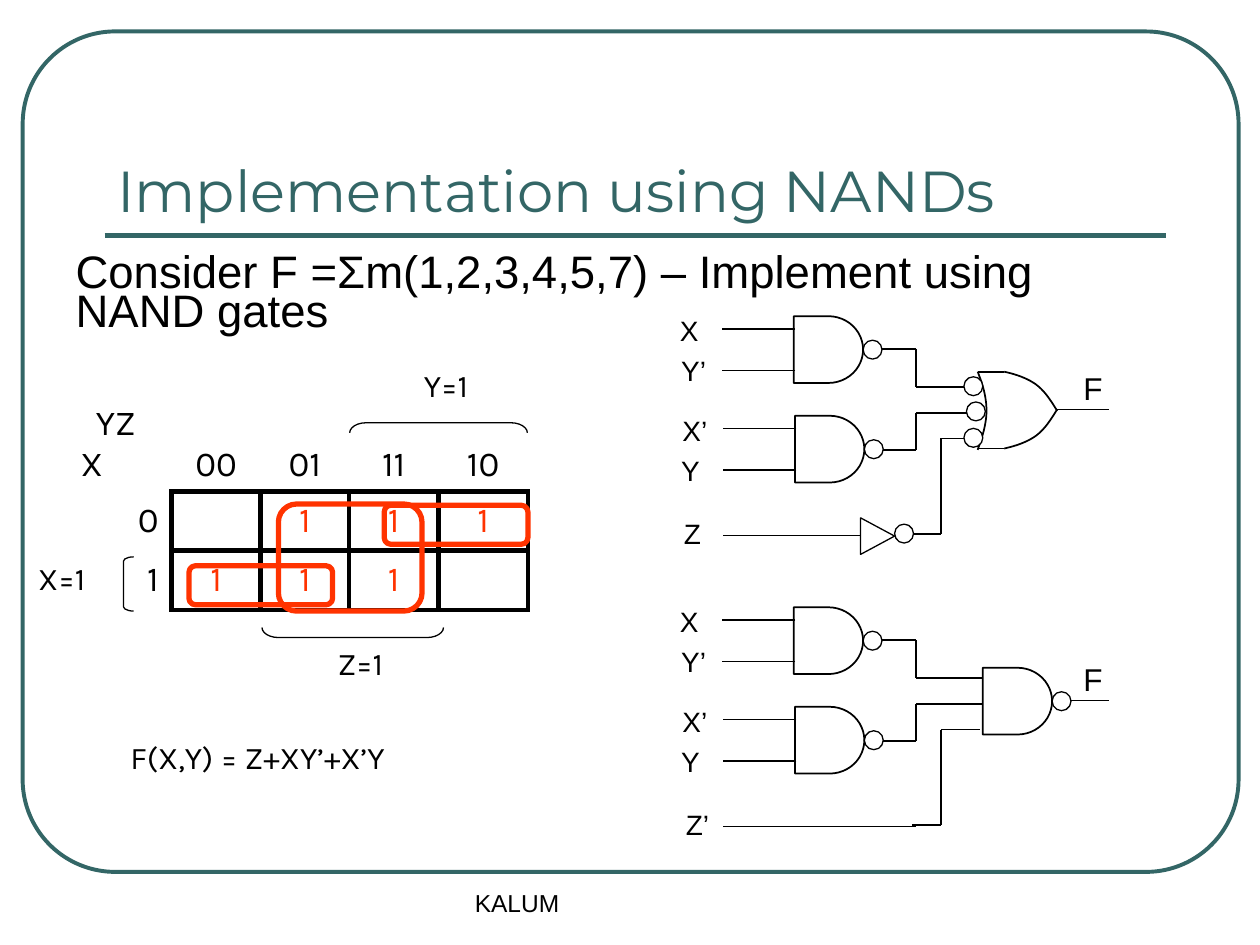
from itertools import pairwise

from lxml.etree import SubElement
from pptx import Presentation
from pptx.dml.color import RGBColor
from pptx.enum.shapes import MSO_CONNECTOR, MSO_SHAPE
from pptx.enum.text import MSO_ANCHOR, PP_ALIGN
from pptx.oxml.ns import qn
from pptx.util import Pt

PX = 9144  # 100 px to the inch
TEAL, BLACK, RED, WHITE = "336666", "000000", "FF3300", "FFFFFF"
CIRCUIT_PITCH = 231
NO_STYLE = "{2D5ABB26-0587-4C30-8999-92F81FD0307C}"


def px(*lengths):
    return [round(length * PX) for length in lengths]


def rgb(value):
    return RGBColor.from_string(value)


def write(frame, text, size=18, font="Karla", color=BLACK,
          align=PP_ALIGN.CENTER, anchor=MSO_ANCHOR.TOP, wrap=True):
    """Fill a text frame with one formatted paragraph and return it."""
    frame.word_wrap = wrap
    frame.vertical_anchor = anchor
    paragraph = frame.paragraphs[0]
    paragraph.text = text
    paragraph.alignment = align
    for run in paragraph.runs:
        run.font.size = Pt(size)
        run.font.name = font
        run.font.color.rgb = rgb(color)
    return paragraph


def label(slide, text, left, top, width, height=37, wrap=False, **text_format):
    box = slide.shapes.add_textbox(*px(left, top, width, height))
    write(box.text_frame, text, wrap=wrap, **text_format)


def signal(slide, text, left, top, width):
    label(slide, text, left, top, width, font="Arial", size=16)


def outline(shape, color=BLACK, weight=1, fill=None):
    shape.shadow.inherit = False
    if fill:
        shape.fill.solid()
        shape.fill.fore_color.rgb = rgb(fill)
    else:
        shape.fill.background()
    shape.line.color.rgb = rgb(color)
    shape.line.width = Pt(weight)


def figure(slide, kind, left, top, width, height, adjust=None, turn=0, **look):
    shape = slide.shapes.add_shape(kind, *px(left, top, width, height))
    if adjust is not None:
        shape.adjustments[0] = adjust
    shape.rotation = turn
    outline(shape, **look)


def wire(slide, *points, color=BLACK, weight=1):
    """Join the points with straight connectors."""
    for start, end in pairwise(points):
        segment = slide.shapes.add_connector(
            MSO_CONNECTOR.STRAIGHT, *px(*start, *end))
        segment.line.color.rgb = rgb(color)
        segment.line.width = Pt(weight)
        SubElement(segment._element.spPr, qn("a:effectLst"))


def curve(slide, points, steps=10):
    """Draw chained cubic Bezier curves as one open line."""
    track = [points[0]]
    for first in range(0, len(points) - 1, 3):
        a, b, c, d = points[first:first + 4]
        for step in range(1, steps + 1):
            t = step / steps
            u = 1 - t
            track.append([u**3 * a[i] + 3 * u * u * t * b[i]
                          + 3 * u * t * t * c[i] + t**3 * d[i] for i in (0, 1)])
    track = [px(*point) for point in track]
    builder = slide.shapes.build_freeform(*track[0])
    builder.add_line_segments(track[1:], close=False)
    outline(builder.convert_to_shape())


def bubble(slide, left, top):
    figure(slide, MSO_SHAPE.OVAL, left, top, 15, 15, weight=0.75, fill=WHITE)


def nand(slide, left, top):
    figure(slide, MSO_SHAPE.FLOWCHART_DELAY, left, top, 55, 53)
    bubble(slide, left + 55, top + 19)


def product_terms(slide, drop):
    """Draw the two input NANDs and their wires to the output gate."""
    for left, top, names, out, target in (
            (630, 251, ("X", "Y’"), 277, 307), (631, 330, ("X’", "Y"), 357, 328)):
        wire(slide, *((x, y + drop) for x, y in (
            (687, out), (727, out), (727, target), (780, target))))
        for row, name in enumerate(names):
            y = top + drop + 33 * row
            wire(slide, (left + 1, y + 10), (left - 57, y + 10))
            signal(slide, name, left - 101, top + drop - 7 + 32 * row,
                   29 + 7 * len(name))
        nand(slide, left, top + drop)
    wire(slide, *((x, y + drop) for x, y in (
        (724, 424), (747, 424), (747, 348), (778, 348))))


def output(slide, drop):
    label(slide, "F", 850, 288 + drop, 34, 40, font="Arial")
    wire(slide, (839, 325 + drop), (880, 325 + drop))


def nand_or_circuit(slide):
    product_terms(slide, 0)
    output(slide, 0)
    curve(slide, [(776, 295), (780, 305), (783, 315), (783, 326),
                  (783, 336), (780, 346), (776, 357)])
    nose = [(797, 295), (806, 297), (815, 300), (822, 305),
            (829, 310), (834, 318), (839, 326)]
    for edge in (nose, [(x, 651 - y) for x, y in nose]):
        wire(slide, (776, edge[0][1]), edge[0])
        curve(slide, edge)
    for left, top in ((765, 299), (767, 319), (765, 340), (710, 416)):
        bubble(slide, left, top)
    figure(slide, MSO_SHAPE.ISOSCELES_TRIANGLE, 682, 412, 29, 27,
           turn=90, weight=0.75)
    wire(slide, (683, 425), (574, 425), weight=0.75)
    signal(slide, "Z", 533, 405, 33)


def all_nand_circuit(slide):
    product_terms(slide, CIRCUIT_PITCH)
    output(slide, CIRCUIT_PITCH)
    wire(slide, (727, 656), (574, 656), weight=0.75)
    signal(slide, "Z’", 533, 636, 41)
    nand(slide, 780, 530)


def border(cell, *sides):
    for side in sides:
        line = SubElement(cell._tc.get_or_add_tcPr(), qn(f"a:ln{side}"), w="38100")
        fill = SubElement(line, qn("a:solidFill"))
        SubElement(fill, qn("a:srgbClr"), val=BLACK)


def karnaugh_map(slide):
    rows = (("YZ\vX", "00", "01", "11", "10"),
            ("0", "", "1", "1", "1"),
            ("1", "1", "1", "1", ""))
    frame = slide.shapes.add_table(3, 5, *px(54, 315, 365, 169))
    grid = frame.table
    grid.first_row = grid.horz_banding = False
    grid._tbl.tblPr.find(qn("a:tableStyleId")).text = NO_STYLE
    for column, width in zip(grid.columns, px(82, 71, 70, 71, 71)):
        column.width = width
    for row, height in zip(grid.rows, px(75, 47, 47)):
        row.height = height
    for r, values in enumerate(rows):
        for c, value in enumerate(values):
            cell = grid.cell(r, c)
            if r and c:
                border(cell, "L", "R", "T", "B")
            elif r:
                border(cell, "R")
            elif c:
                border(cell, "B")
            cell.fill.background()
            align = PP_ALIGN.CENTER if c else PP_ALIGN.RIGHT if r else PP_ALIGN.LEFT
            paragraph = write(cell.text_frame, value, size=20, align=align,
                              color=RED if r and c else BLACK)
            cell.vertical_anchor = MSO_ANCHOR.MIDDLE if r else MSO_ANCHOR.BOTTOM
            if not (r or c):
                paragraph._p.get_or_add_pPr().set("indent", str(12 * PX))

    for text, text_place, bracket, adjust, turn in (
            ("Y=1", (313, 286), (344, 269, 8, 141), 1.64, 90),
            ("Z=1", (245, 506), (276, 430, 8, 144), 1.64, 270),
            ("X=1", (8, 439), (98, 442, 8, 43), 0.43, 0)):
        figure(slide, MSO_SHAPE.LEFT_BRACKET, *bracket, adjust=adjust,
               turn=turn, weight=0.75)
        label(slide, text, *text_place, 82, 50)
    for loop in ((221, 400, 114, 85), (305, 401, 114, 31), (150, 449, 114, 31)):
        figure(slide, MSO_SHAPE.ROUNDED_RECTANGLE, *loop, adjust=0.17,
               color=RED, weight=3)
    label(slide, "F(X,Y) = Z+XY’+X’Y", 47, 581, 315, 50)


def place(holder, left, top, width, height):
    holder.left, holder.top, holder.width, holder.height = px(left, top, width, height)


def headings(slide):
    title, body = slide.placeholders
    place(title, 83, 58, 841, 125)
    write(title.text_frame, "Implementation using NANDs", size=33,
          font="Montserrat", color=TEAL, align=PP_ALIGN.LEFT,
          anchor=MSO_ANCHOR.BOTTOM)
    place(body, 50, 200, 867, 75)
    task = write(body.text_frame,
                 "Consider F =Σm(1,2,3,4,5,7) – Implement using NAND gates",
                 size=26, font="Arial", align=PP_ALIGN.LEFT)
    task.line_spacing = 0.7
    task.space_before = Pt(7.8)
    properties = task._p.get_or_add_pPr()
    properties.set("marL", "0")
    properties.set("indent", "0")
    SubElement(properties, qn("a:buNone"))


def main():
    deck = Presentation()
    deck.slide_width, deck.slide_height = px(1000, 750)
    slide = deck.slides.add_slide(deck.slide_layouts[1])
    figure(slide, MSO_SHAPE.ROUNDED_RECTANGLE, 18, 25, 965, 667,
           adjust=0.11, color=TEAL, weight=2.25)
    wire(slide, (83, 187), (925, 187), color=TEAL, weight=3)
    headings(slide)
    karnaugh_map(slide)
    nand_or_circuit(slide)
    all_nand_circuit(slide)
    label(slide, "KALUM", 367, 700, 316, 50, wrap=True, size=14,
          font="Arial", align=PP_ALIGN.LEFT)
    deck.save("out.pptx")


if __name__ == "__main__":
    main()
